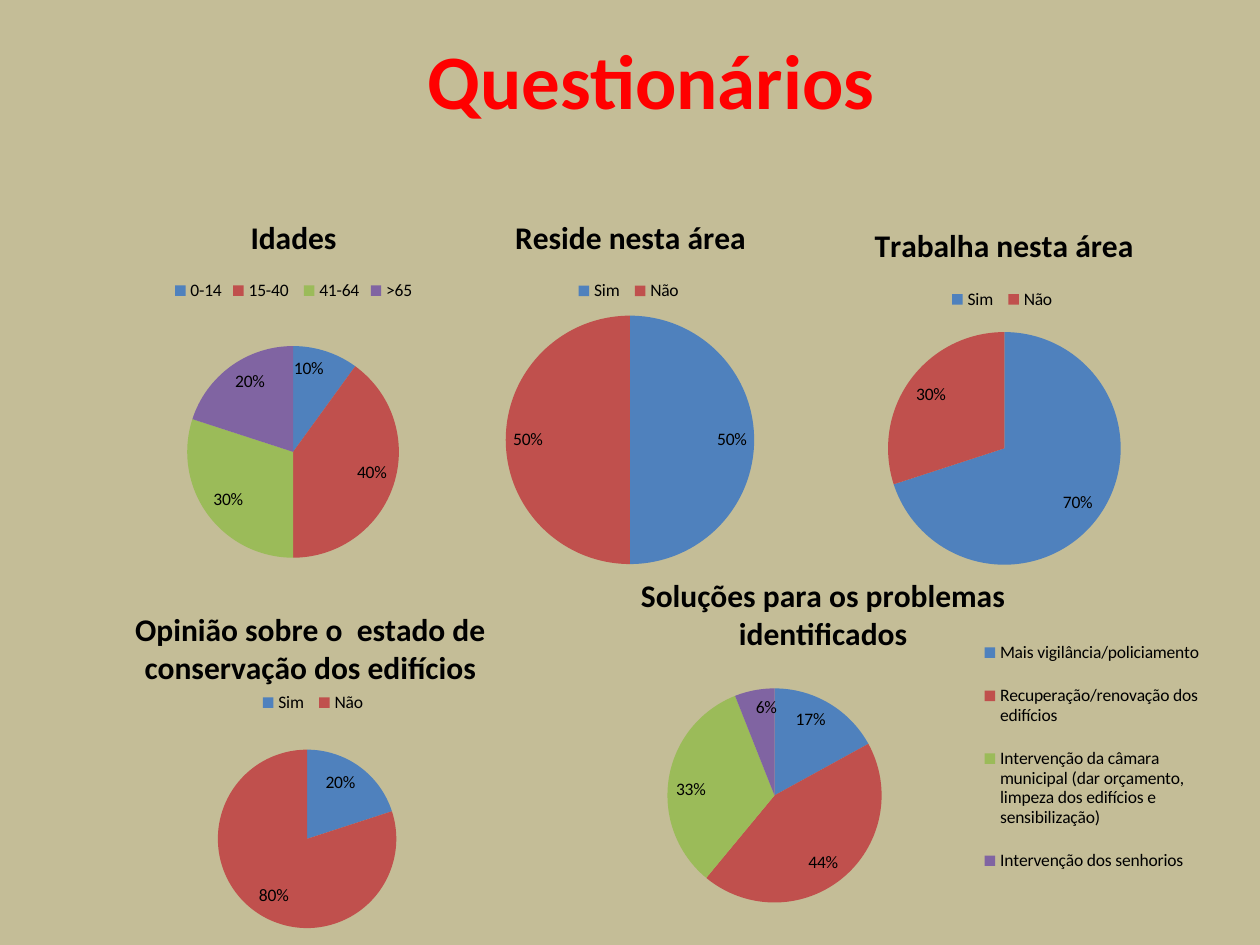
from dataclasses import dataclass
from typing import Optional

from lxml import etree
from pptx import Presentation
from pptx import util as u
from pptx.chart import data as chart_data
from pptx.dml.color import RGBColor
from pptx.enum import chart as kinds
from pptx.enum import text as styles
from pptx.oxml.ns import qn


@dataclass(frozen=True)
class Theme:
    background: str = "C4BD97"
    heading: str = "FF0000"
    ink: str = "000000"
    slices: tuple[str, ...] = ("4F81BD", "C0504D", "9BBB59", "8064A2")
    font: str = "Calibri"
    heading_size: float = 44
    title_size: float = 18
    body_size: float = 10


THEME = Theme()


@dataclass(frozen=True)
class Frame:
    left: float
    top: float
    width: float = 0
    height: float = 0


@dataclass(frozen=True)
class Pie:
    title: str
    frame: Frame
    center: tuple[float, float]
    radius: float
    categories: tuple[str, ...]
    values: tuple[int, ...]
    series_count: int = 1
    title_at: Optional[Frame] = None
    legend_at: Optional[Frame] = None
    legend_position: kinds.XL_LEGEND_POSITION = kinds.XL_LEGEND_POSITION.TOP


YES_NO = ("Sim ", "Não ")

PIES = (
    Pie("Idades", Frame(42.5, 111.6, 250.6, 217.4), (167.5, 258.3), 60.5,
        ("0-14", "15-40 ", "41-64", ">65"), (10, 40, 30, 20)),
    Pie("Reside nesta área", Frame(201.6, 111.6, 317.5, 221), (360, 251.4), 71,
        YES_NO, (50, 50), series_count=2),
    Pie("Trabalha nesta área", Frame(393.8, 116.6, 360, 216), (574, 256.3), 66.5,
        YES_NO, (70, 30)),
    Pie("Opinião sobre o  estado de conservação dos edifícios",
        Frame(0, 324, 360, 216), (175.5, 479.4), 51, YES_NO, (20, 80),
        title_at=Frame(74, 344), legend_at=Frame(147, 393)),
    Pie("Soluções para os problemas identificados",
        Frame(331.9, 309.6, 360, 216), (442.6, 454.6), 61.2,
        ("Mais vigilância/policiamento ", "Recuperação/renovação dos edifícios ",
         "Intervenção da câmara municipal (dar orçamento, limpeza dos edifícios "
         "e sensibilização) ", "Intervenção dos senhorios"),
        (17, 44, 33, 6), title_at=Frame(363, 324.5),
        legend_at=Frame(560, 354, 130, 157),
        legend_position=kinds.XL_LEGEND_POSITION.RIGHT),
)


def write(frame, text: str, *, size: float, color: str, bold: bool = True,
          align=styles.PP_ALIGN.CENTER) -> None:
    para = frame.paragraphs[0]
    para.alignment = align
    span = para.add_run()
    span.text = text
    span.font.name = THEME.font
    span.font.size = u.Pt(size)
    span.font.bold = bold
    span.font.color.rgb = RGBColor.from_string(color)


def place(element, index: int, area: Frame, chart: Frame, inner: bool = False) -> None:
    for old in element.findall(qn("c:layout")):
        element.remove(old)
    layout = etree.Element(qn("c:layout"))
    manual = etree.SubElement(layout, qn("c:manualLayout"))
    settings = [("layoutTarget", "inner")] if inner else []
    settings += [("xMode", "edge"), ("yMode", "edge"),
                 ("x", (area.left - chart.left) / chart.width),
                 ("y", (area.top - chart.top) / chart.height)]
    if area.width:
        settings += [("w", area.width / chart.width), ("h", area.height / chart.height)]
    for name, value in settings:
        etree.SubElement(manual, qn(f"c:{name}")).set("val", str(value))
    element.insert(index, layout)


def draw_pie(page, pie: Pie) -> None:
    data = chart_data.CategoryChartData()
    data.categories = pie.categories
    for number in range(1, pie.series_count + 1):
        data.add_series(f"Series {number}", pie.values)
    area = pie.frame
    chart = page.shapes.add_chart(
        kinds.XL_CHART_TYPE.PIE, u.Pt(area.left), u.Pt(area.top),
        u.Pt(area.width), u.Pt(area.height), data).chart
    chart.replace_data(data)
    chart.font.name = THEME.font
    chart.font.size = u.Pt(THEME.body_size)
    chart.font.color.rgb = RGBColor.from_string(THEME.ink)

    chart.has_title = True
    title = chart.chart_title
    write(title.text_frame, pie.title, size=THEME.title_size, color=THEME.ink)
    title.include_in_layout = False
    if pie.title_at:
        place(title._element, 1, pie.title_at, area)

    chart.has_legend = True
    chart.legend.position = pie.legend_position
    chart.legend.include_in_layout = False
    if pie.legend_at:
        place(chart.legend._element, 1, pie.legend_at, area)

    plot = chart.plots[0]
    plot.vary_by_categories = True
    x, y = pie.center
    circle = Frame(x - pie.radius, y - pie.radius, 2 * pie.radius, 2 * pie.radius)
    place(plot._element.getparent(), 0, circle, area, inner=True)
    for series in plot.series:
        for index, color in enumerate(THEME.slices[:len(pie.values)]):
            fill = series.points[index].format.fill
            fill.solid()
            fill.fore_color.rgb = RGBColor.from_string(color)
        labels = series.data_labels
        labels.show_percentage = True
        labels.show_value = False
        labels.number_format = "0%"
        labels.number_format_is_linked = False
        labels.position = kinds.XL_LABEL_POSITION.INSIDE_END


def draw_heading(page, text: str, area: Frame) -> None:
    box = page.shapes.add_textbox(u.Pt(area.left), u.Pt(area.top),
                                  u.Pt(area.width), u.Pt(area.height))
    box.text_frame.word_wrap = True
    box.text_frame.vertical_anchor = styles.MSO_ANCHOR.MIDDLE
    write(box.text_frame, text, size=THEME.heading_size, color=THEME.heading)


def main() -> None:
    deck = Presentation()
    deck.slide_width, deck.slide_height = u.Pt(720), u.Pt(540)
    page = deck.slides.add_slide(deck.slide_layouts[6])
    page.background.fill.solid()
    page.background.fill.fore_color.rgb = RGBColor.from_string(THEME.background)
    draw_heading(page, "Questionários", Frame(48.2, 0, 648, 90))
    for pie in PIES:
        draw_pie(page, pie)
    deck.save("out.pptx")


if __name__ == "__main__":
    main()
